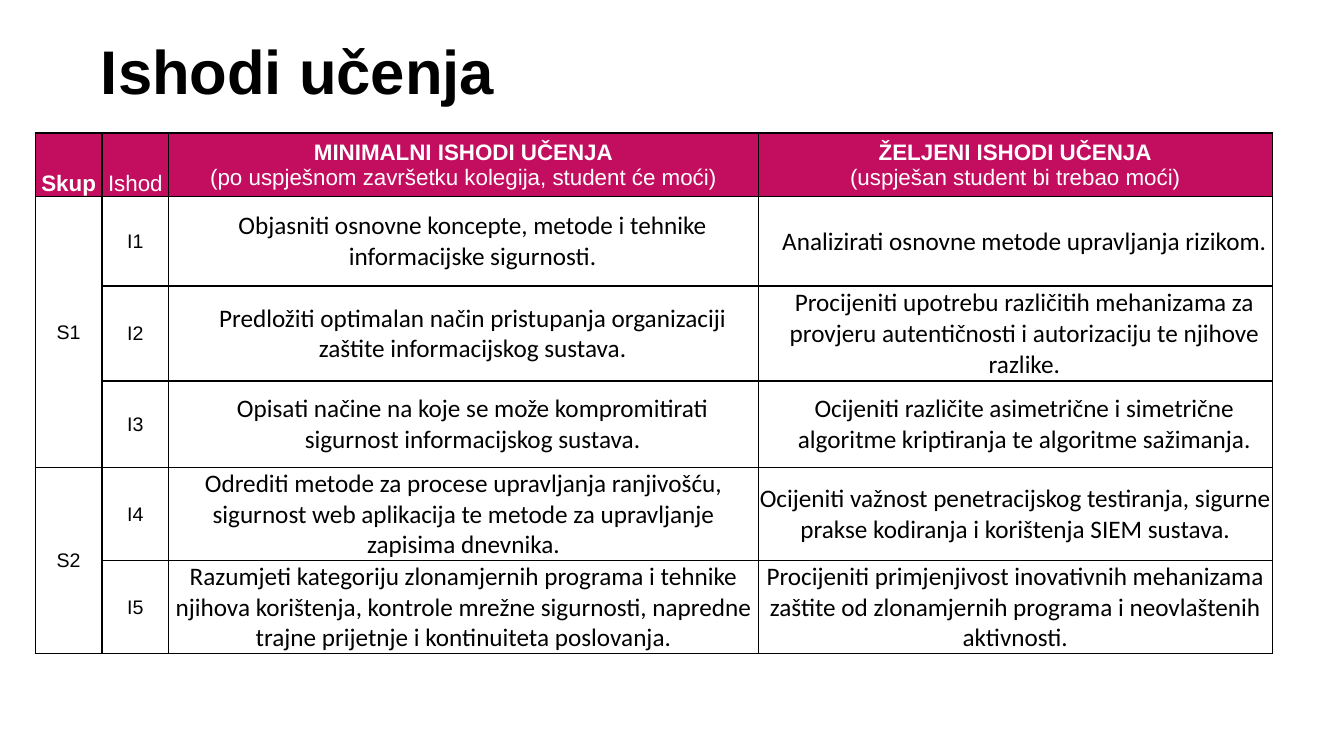
from dataclasses import dataclass

import pptx
import pptx.dml.color
import pptx.enum.text
import pptx.oxml
import pptx.oxml.ns
import pptx.table
import pptx.text.text
import pptx.util

Cm = pptx.util.Cm
Pt = pptx.util.Pt
ALIGN = pptx.enum.text.PP_ALIGN
ANCHOR = pptx.enum.text.MSO_ANCHOR

MAGENTA = "C30E60"
WHITE = "FFFFFF"
BLACK = "000000"


@dataclass
class Style:
    font: str
    size: int
    colour: str = BLACK
    anchor: ANCHOR = ANCHOR.MIDDLE
    indent: float = 0.02
    fill: str = ""


@dataclass
class Heading:
    text: str
    bold_first: bool
    anchor: ANCHOR


@dataclass
class Outcome:
    code: str
    minimal: str
    desired: str


@dataclass
class Group:
    name: str
    indent: float
    outcomes: list[Outcome]


HEADINGS = [
    Heading("Skup", True, ANCHOR.BOTTOM),
    Heading("Ishod", False, ANCHOR.BOTTOM),
    Heading("MINIMALNI ISHODI UČENJA\n(po uspješnom završetku kolegija, student će moći)", True, ANCHOR.MIDDLE),
    Heading("ŽELJENI ISHODI UČENJA\n(uspješan student bi trebao moći)", True, ANCHOR.MIDDLE),
]

GROUPS = [
    Group("S1", 0.48, [
        Outcome("I1",
                "Objasniti osnovne koncepte, metode i tehnike informacijske sigurnosti.",
                "Analizirati osnovne metode upravljanja rizikom."),
        Outcome("I2",
                "Predložiti optimalan način pristupanja organizaciji zaštite informacijskog sustava.",
                "Procijeniti upotrebu različitih mehanizama za provjeru autentičnosti "
                "i autorizaciju te njihove razlike."),
        Outcome("I3",
                "Opisati načine na koje se može kompromitirati sigurnost informacijskog sustava.",
                "Ocijeniti različite asimetrične i simetrične algoritme kriptiranja te algoritme sažimanja."),
    ]),
    Group("S2", 0.02, [
        Outcome("I4",
                "Odrediti metode za procese upravljanja ranjivošću, sigurnost web aplikacija "
                "te metode za upravljanje zapisima dnevnika.",
                "Ocijeniti važnost penetracijskog testiranja, sigurne prakse kodiranja i korištenja SIEM sustava."),
        Outcome("I5",
                "Razumjeti kategoriju zlonamjernih programa i tehnike njihova korištenja, kontrole mrežne "
                "sigurnosti, napredne trajne prijetnje i kontinuiteta poslovanja.",
                "Procijeniti primjenjivost inovativnih mehanizama zaštite od zlonamjernih programa "
                "i neovlaštenih aktivnosti."),
    ]),
]

COLUMN_WIDTHS = [1.68, 1.68, 14.86, 12.95]
ROW_HEIGHTS = [1.6, 2.26, 2.39, 2.18, 1.85, 2.11]


def rgb(colour: str) -> pptx.dml.color.RGBColor:
    return pptx.dml.color.RGBColor.from_string(colour)


def format_paragraph(paragraph: pptx.text.text._Paragraph, font: str, size: int,
                     colour: str, bold: bool, align: ALIGN) -> None:
    paragraph.alignment = align
    for run in paragraph.runs:
        run.font.name = font
        run.font.size = Pt(size)
        run.font.bold = bold
        run.font.color.rgb = rgb(colour)


def draw_borders(cell: pptx.table._Cell) -> None:
    properties = cell._tc.get_or_add_tcPr()
    for side in ("lnL", "lnR", "lnT", "lnB"):
        properties.append(pptx.oxml.parse_xml(
            f'<a:{side} {pptx.oxml.ns.nsdecls("a")} w="{Pt(1)}">'
            f'<a:solidFill><a:srgbClr val="{BLACK}"/></a:solidFill></a:{side}>'))


def write_cell(cell: pptx.table._Cell, text: str, style: Style, bold_first: bool = False) -> None:
    cell.text_frame.text = text
    cell.vertical_anchor = style.anchor
    cell.margin_left = Cm(style.indent)
    cell.margin_right = cell.margin_top = Cm(0.02)
    cell.margin_bottom = 0
    for position, paragraph in enumerate(cell.text_frame.paragraphs):
        format_paragraph(paragraph, style.font, style.size, style.colour,
                         bold_first and position == 0, ALIGN.CENTER)
    if style.fill:
        cell.fill.solid()
        cell.fill.fore_color.rgb = rgb(style.fill)


def fill_outcomes(outcomes_table: pptx.table.Table) -> None:
    for column, heading in enumerate(HEADINGS):
        style = Style("Arial", 16, WHITE, heading.anchor, fill=MAGENTA)
        write_cell(outcomes_table.cell(0, column), heading.text, style, heading.bold_first)

    label = Style("Arial", 14)
    row = 1
    for group in GROUPS:
        description = Style("Calibri", 18, indent=group.indent)
        group_cell = outcomes_table.cell(row, 0)
        group_cell.merge(outcomes_table.cell(row + len(group.outcomes) - 1, 0))
        write_cell(group_cell, group.name, label)
        for outcome in group.outcomes:
            write_cell(outcomes_table.cell(row, 1), outcome.code, label)
            write_cell(outcomes_table.cell(row, 2), outcome.minimal, description)
            write_cell(outcomes_table.cell(row, 3), outcome.desired, description)
            row += 1


def main() -> None:
    presentation = pptx.Presentation()
    presentation.slide_width = Cm(33.87)
    presentation.slide_height = Cm(19.05)
    slide = presentation.slides.add_slide(presentation.slide_layouts[5])

    heading = slide.shapes.title
    heading.left, heading.top, heading.width, heading.height = Cm(2.29), Cm(0.05), Cm(29.21), Cm(3.68)
    heading.text_frame.text = "Ishodi učenja"
    heading.text_frame.vertical_anchor = ANCHOR.MIDDLE
    heading_line = heading.text_frame.paragraphs[0]
    heading_line.line_spacing = 0.9
    format_paragraph(heading_line, "Arial", 44, BLACK, True, ALIGN.LEFT)

    outcomes_table = slide.shapes.add_table(
        len(ROW_HEIGHTS), len(COLUMN_WIDTHS), Cm(0.89), Cm(3.35),
        Cm(sum(COLUMN_WIDTHS)), Cm(sum(ROW_HEIGHTS))).table
    outcomes_table.first_row = False
    outcomes_table.horz_banding = False
    for column, width in zip(outcomes_table.columns, COLUMN_WIDTHS):
        column.width = Cm(width)
    for row, height in zip(outcomes_table.rows, ROW_HEIGHTS):
        row.height = Cm(height)
    for cell in outcomes_table.iter_cells():
        draw_borders(cell)
        cell.fill.background()
    fill_outcomes(outcomes_table)

    presentation.save("out.pptx")


if __name__ == "__main__":
    main()
